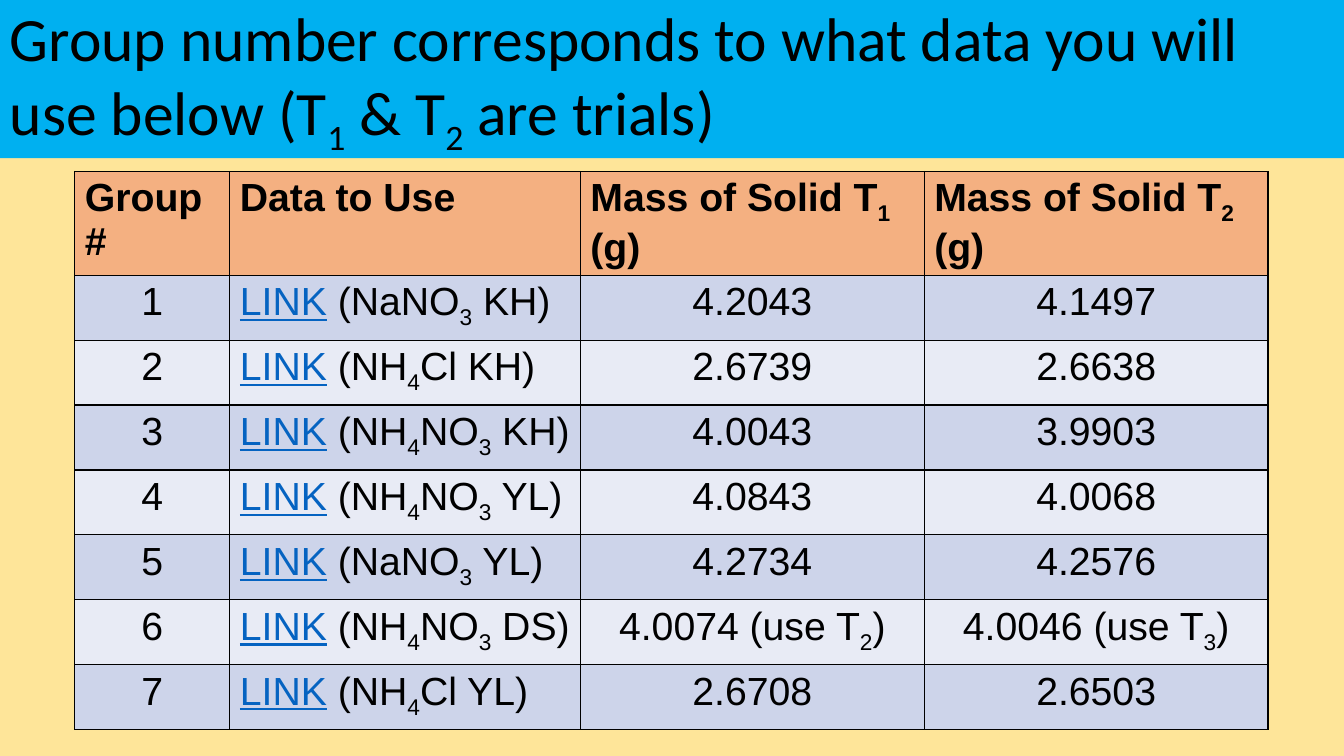
from dataclasses import dataclass
from typing import NamedTuple

from lxml import etree
from pptx import Presentation
from pptx import util as u
from pptx.dml import color
from pptx.enum import shapes, text
from pptx.oxml import ns


@dataclass(frozen=True)
class Theme:
    background: str = "FEE599"
    banner: str = "00B0F0"
    header: str = "F4B081"
    bands: tuple[str, str] = ("CDD4EA", "E8EBF5")
    ink: str = "000000"
    link: str = "0563C1"
    title_font: str = "Calibri"
    table_font: str = "Arial"
    title_size: float = 44
    table_size: float = 28
    border: float = 1


class Group(NamedTuple):
    compound: str
    trial_1: str
    trial_2: str


THEME = Theme()

# Digits between tildes are subscripts
TITLE = "Group number corresponds to what data you will use below (T~1~ & T~2~ are trials)"
HEADINGS = ("Group #", "Data to Use", "Mass of Solid T~1~ (g)", "Mass of Solid T~2~ (g)")
GROUPS = (
    Group("NaNO~3~ KH", "4.2043", "4.1497"),
    Group("NH~4~Cl KH", "2.6739", "2.6638"),
    Group("NH~4~NO~3~ KH", "4.0043", "3.9903"),
    Group("NH~4~NO~3~ YL", "4.0843", "4.0068"),
    Group("NaNO~3~ YL", "4.2734", "4.2576"),
    Group("NH~4~NO~3~ DS", "4.0074 (use T~2~)", "4.0046 (use T~3~)"),
    Group("NH~4~Cl YL", "2.6708", "2.6503"),
)
COLUMN_WIDTHS = (110.7, 250.4, 245.6, 245.6)
ROW_HEIGHT = 46.4


def rgb(value: str) -> color.RGBColor:
    return color.RGBColor.from_string(value)


def write(paragraph, content: str, *, font: str = THEME.table_font,
          size: float = THEME.table_size, ink: str = THEME.ink, bold: bool = False,
          underline: bool = False, align=text.PP_ALIGN.LEFT) -> None:
    """Append content to the paragraph, lowering the parts between tildes."""
    paragraph.alignment = align
    for index, part in enumerate(content.split("~")):
        run = paragraph.add_run()
        run.text = part
        run.font.name, run.font.size = font, u.Pt(size)
        run.font.bold, run.font.underline = bold, underline
        run.font.color.rgb = rgb(ink)
        if index % 2:
            run._r.get_or_add_rPr().set("baseline", "-25000")


def style_cell(cell, fill: str) -> None:
    """Draw the four cell borders, then the fill."""
    properties = cell._tc.get_or_add_tcPr()
    for side in ("a:lnL", "a:lnR", "a:lnT", "a:lnB"):
        line = etree.SubElement(properties, ns.qn(side), w=str(u.Pt(THEME.border)))
        solid = etree.SubElement(line, ns.qn("a:solidFill"))
        etree.SubElement(solid, ns.qn("a:srgbClr"), val=THEME.ink)
    cell.fill.solid()
    cell.fill.fore_color.rgb = rgb(fill)


def add_banner(slide) -> None:
    banner = slide.shapes.add_shape(
        shapes.MSO_SHAPE.RECTANGLE, u.Pt(0), u.Pt(0), u.Pt(960), u.Pt(113))
    banner.shadow.inherit = False
    banner.fill.solid()
    banner.fill.fore_color.rgb = rgb(THEME.banner)
    banner.line.fill.background()
    frame = banner.text_frame
    frame.word_wrap = True
    frame.vertical_anchor = text.MSO_ANCHOR.MIDDLE
    frame.paragraphs[0].line_spacing = 0.9
    write(frame.paragraphs[0], TITLE, font=THEME.title_font, size=THEME.title_size)


def add_mass_table(slide) -> None:
    row_count = len(GROUPS) + 1
    masses = slide.shapes.add_table(
        row_count, len(HEADINGS), u.Pt(53.5), u.Pt(122.4),
        u.Pt(sum(COLUMN_WIDTHS)), u.Pt(ROW_HEIGHT * row_count)).table
    for column, width in zip(masses.columns, COLUMN_WIDTHS):
        column.width = u.Pt(width)
    for row in masses.rows:
        row.height = u.Pt(ROW_HEIGHT)

    # Header row
    for column, heading in enumerate(HEADINGS):
        cell = masses.cell(0, column)
        style_cell(cell, THEME.header)
        write(cell.text_frame.paragraphs[0], heading, bold=True)

    # One banded row per group
    for number, group in enumerate(GROUPS, start=1):
        entries = (str(number), f" ({group.compound})", group.trial_1, group.trial_2)
        for column, entry in enumerate(entries):
            cell = masses.cell(number, column)
            style_cell(cell, THEME.bands[(number - 1) % 2])
            paragraph = cell.text_frame.paragraphs[0]
            if column == 1:
                write(paragraph, "LINK", ink=THEME.link, underline=True)
                write(paragraph, entry)
            else:
                write(paragraph, entry, align=text.PP_ALIGN.CENTER)


def main() -> None:
    deck = Presentation()
    deck.slide_width, deck.slide_height = u.Pt(960), u.Pt(540)
    slide = deck.slides.add_slide(deck.slide_layouts[6])
    slide.background.fill.solid()
    slide.background.fill.fore_color.rgb = rgb(THEME.background)
    add_banner(slide)
    add_mass_table(slide)
    deck.save("out.pptx")


if __name__ == "__main__":
    main()
